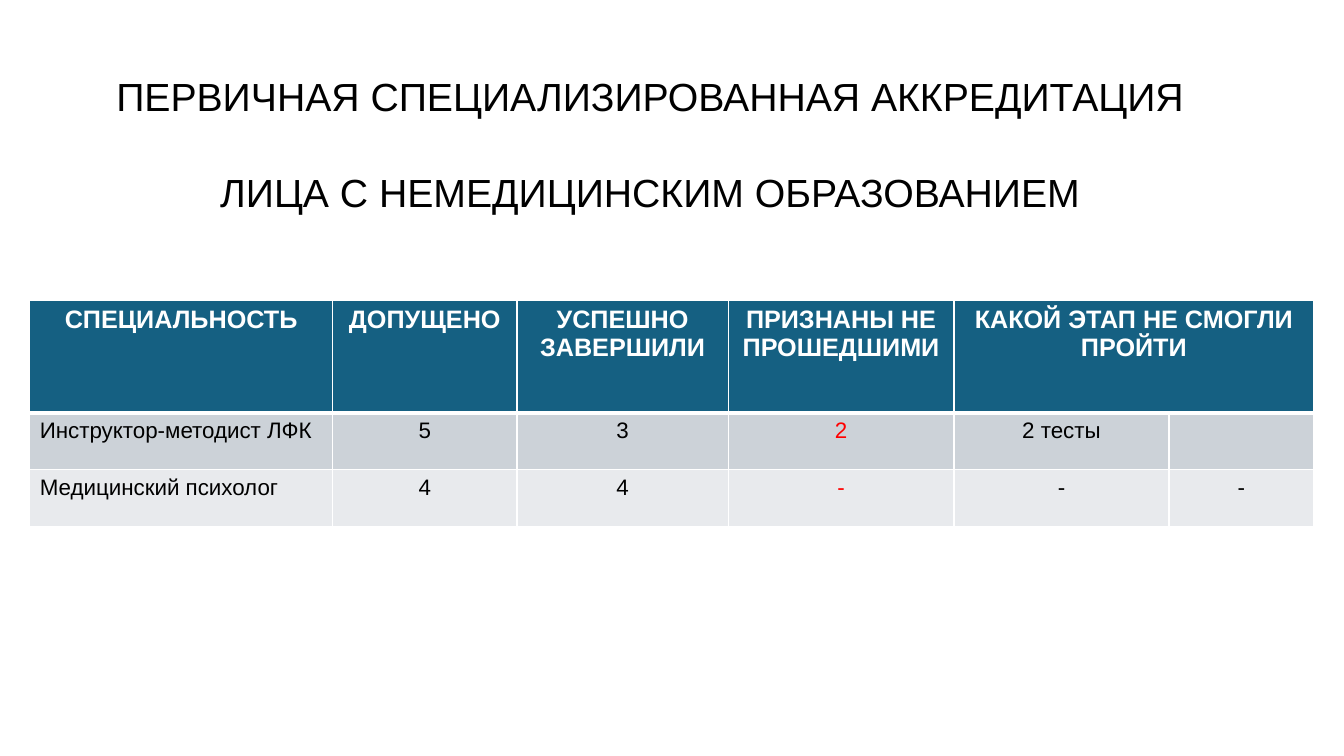
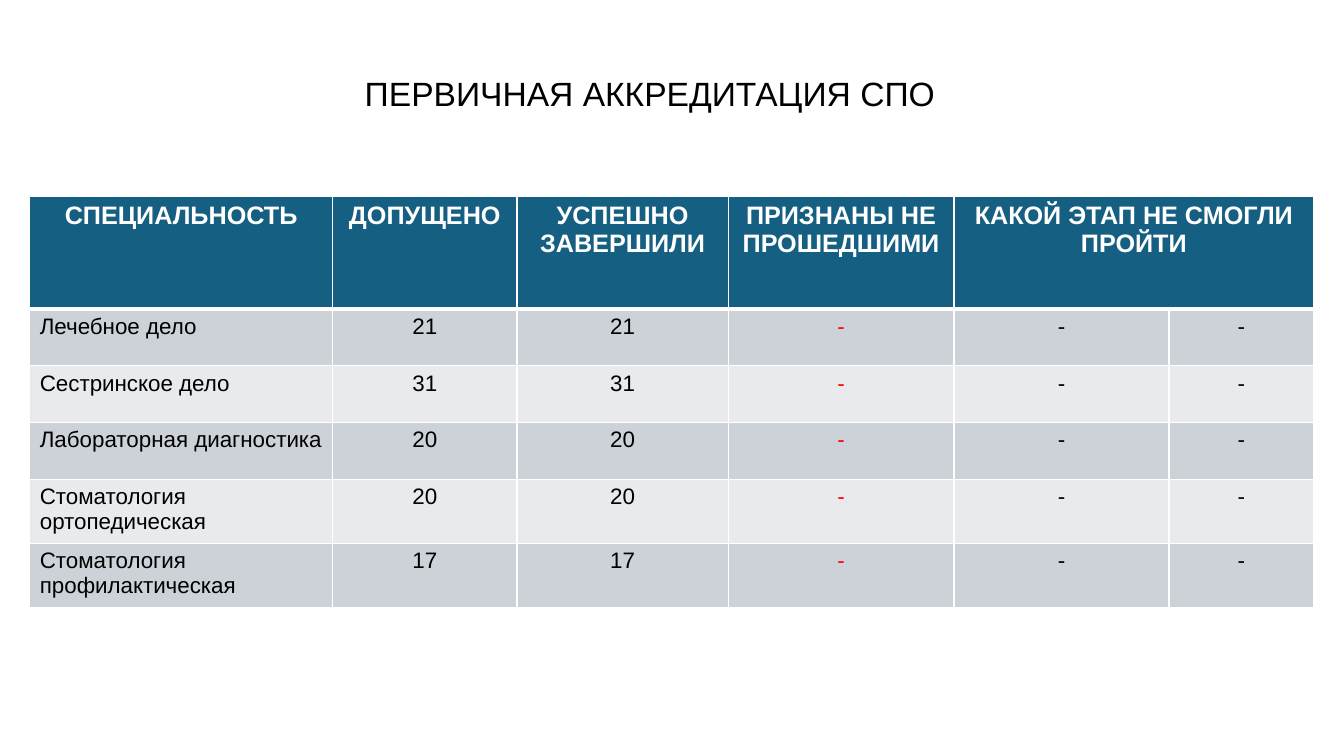
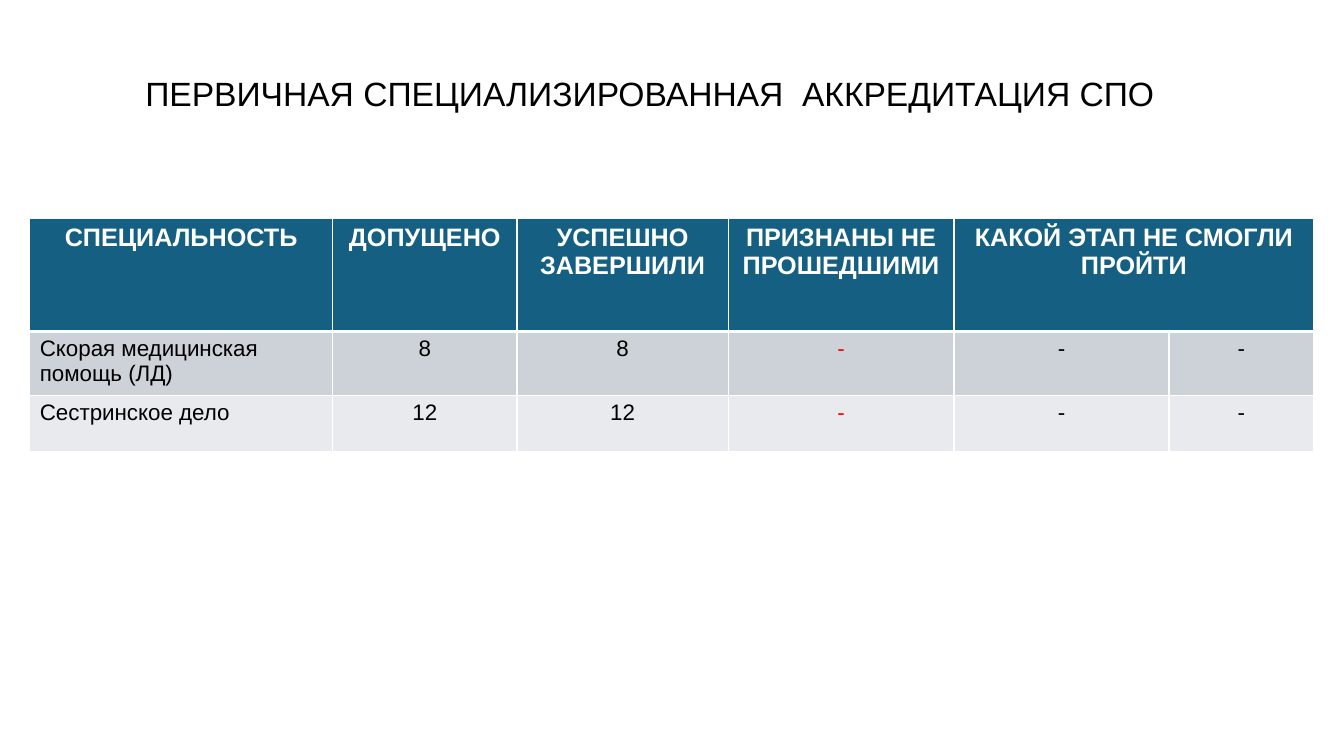
import pptx
import pptx.util
import pptx.dml.color
import pptx.enum.text
import pptx.oxml

Cm = pptx.util.Cm
Pt = pptx.util.Pt
ALIGN = pptx.enum.text.PP_ALIGN

FONT = "Arial"
HUES = {
    "head": "156082",
    "odd": "CCD2D8",
    "even": "E8EAED",
    "ink": "000000",
    "fail": "FF0000",
    "white": "FFFFFF",
}
HEADS = ["СПЕЦИАЛЬНОСТЬ", "ДОПУЩЕНО", "УСПЕШНО\nЗАВЕРШИЛИ",
         "ПРИЗНАНЫ НЕ ПРОШЕДШИМИ", "КАКОЙ ЭТАП НЕ СМОГЛИ ПРОЙТИ", ""]
WIDTHS = [7.63, 4.65, 5.32, 5.69, 5.42, 3.65]
HEAD_H, ROW_H, TALL_H = 2.84, 1.43, 1.61
LINE_MAX = 25
MID_X = 16.38
FAIL_COL = 3

SLIDES = [
    {
        "title": "ПЕРВИЧНАЯ СПЕЦИАЛИЗИРОВАННАЯ АККРЕДИТАЦИЯ\n"
                 "ЛИЦА С НЕМЕДИЦИНСКИМ ОБРАЗОВАНИЕМ",
        "size": 28, "box": (28, 3.84), "top": 7.57,
        "rows": [
            ["Инструктор-методист ЛФК", "5", "3", "2", "2 тесты", ""],
            ["Медицинский психолог", "4", "4", "-", "-", "-"],
        ],
    },
    {
        "title": "ПЕРВИЧНАЯ АККРЕДИТАЦИЯ СПО",
        "size": 24, "box": (15.3, 3), "top": 4.95,
        "rows": [
            ["Лечебное дело", "21", "21", "-", "-", "-"],
            ["Сестринское дело", "31", "31", "-", "-", "-"],
            ["Лабораторная диагностика", "20", "20", "-", "-", "-"],
            ["Стоматология ортопедическая", "20", "20", "-", "-", "-"],
            ["Стоматология профилактическая", "17", "17", "-", "-", "-"],
        ],
    },
    {
        "title": "ПЕРВИЧНАЯ СПЕЦИАЛИЗИРОВАННАЯ  АККРЕДИТАЦИЯ СПО",
        "size": 24, "box": (26.4, 3), "top": 5.51,
        "rows": [
            ["Скорая медицинская помощь (ЛД)", "8", "8", "-", "-", "-"],
            ["Сестринское дело", "12", "12", "-", "-", "-"],
        ],
    },
]


def tint(hue):
    return pptx.dml.color.RGBColor.from_string(HUES[hue])


def put(frame, text, size=16, hue="ink", bold=False, align=ALIGN.CENTER, gap=0):
    for i, line in enumerate(text.split("\n")):
        para = frame.add_paragraph() if i else frame.paragraphs[0]
        para.alignment = align
        para.space_before = Pt(gap if i else 0)
        run = para.add_run()
        run.text = line
        run.font.name = FONT
        run.font.size = Pt(size)
        run.font.bold = bold
        run.font.color.rgb = tint(hue)


def edge(cell, **wide):
    props = cell._tc.get_or_add_tcPr()
    for side in "LRTB":
        props.append(pptx.oxml.parse_xml(
            f'<a:ln{side} xmlns:a="http://schemas.openxmlformats.org/drawingml/2006/main"'
            f' w="{Pt(wide.get(side, 1))}"><a:solidFill>'
            f'<a:srgbClr val="{HUES["white"]}"/></a:solidFill></a:ln{side}>'))


def paint(cell, hue):
    cell.fill.solid()
    cell.fill.fore_color.rgb = tint(hue)


def add_title(slide, text, size, left, top, width, height):
    title = slide.shapes.title
    title.left, title.top = Cm(left), Cm(top)
    title.width, title.height = Cm(width), Cm(height)
    frame = title.text_frame
    frame.word_wrap = True
    frame.auto_size = pptx.enum.text.MSO_AUTO_SIZE.NONE
    frame.vertical_anchor = pptx.enum.text.MSO_ANCHOR.TOP
    put(frame, text, size=size, gap=35)


def add_grid(slide, rows, left, top):
    highs = [HEAD_H] + [TALL_H if len(row[0]) > LINE_MAX else ROW_H for row in rows]
    grid = slide.shapes.add_table(len(highs), len(WIDTHS), Cm(left), Cm(top),
                                  Cm(sum(WIDTHS)), Cm(sum(highs))).table
    for col, width in zip(grid.columns, WIDTHS):
        col.width = Cm(width)
    for line, high in zip(grid.rows, highs):
        line.height = Cm(high)
    for c, text in enumerate(HEADS):
        cell = grid.cell(0, c)
        edge(cell, B=3)
        paint(cell, "head")
        if text:
            put(cell.text_frame, text, size=18, hue="white", bold=True)
    grid.cell(0, 4).merge(grid.cell(0, 5))
    for r, row in enumerate(rows, 1):
        for c, text in enumerate(row):
            cell = grid.cell(r, c)
            edge(cell, T=3 if r == 1 else 1)
            paint(cell, "odd" if r % 2 else "even")
            if text:
                put(cell.text_frame, text,
                    hue="fail" if c == FAIL_COL else "ink",
                    align=ALIGN.CENTER if c else ALIGN.LEFT)


def add_page(deck, title, size, box, top, rows):
    slide = deck.slides.add_slide(deck.slide_layouts[5])
    width, height = box
    add_title(slide, title, size, MID_X - width / 2, 1.7, width, height)
    add_grid(slide, rows, 0.75, top)


def main():
    deck = pptx.Presentation()
    deck.slide_width, deck.slide_height = Cm(33.87), Cm(19.05)
    for page in SLIDES:
        add_page(deck, **page)
    deck.save("out.pptx")


if __name__ == "__main__":
    main()
